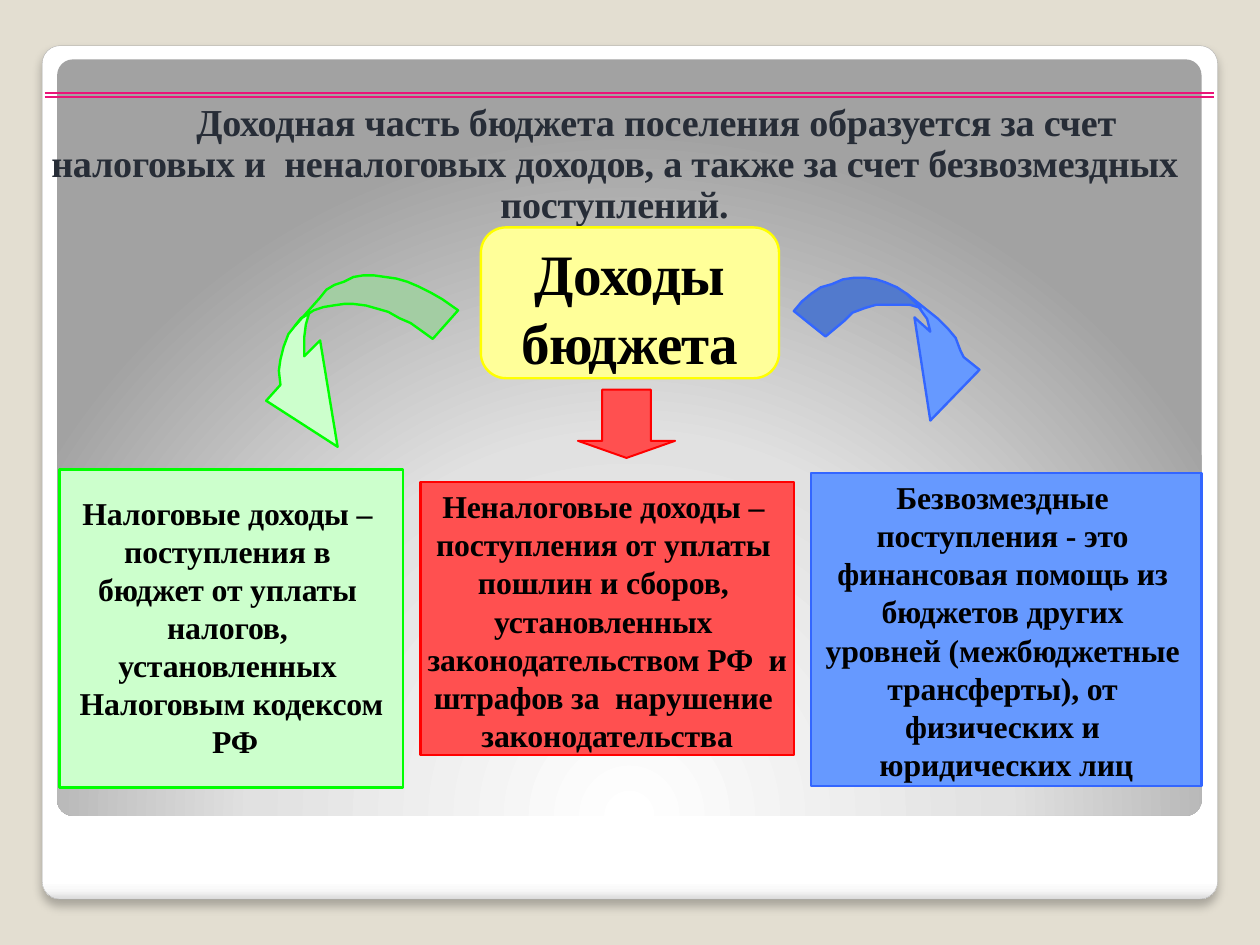
from pptx import Presentation
from pptx.dml.color import RGBColor
from pptx.enum.shapes import MSO_CONNECTOR, MSO_SHAPE
from pptx.enum.text import MSO_ANCHOR, MSO_AUTO_SIZE, PP_ALIGN
from pptx.oxml import parse_xml
from pptx.oxml.ns import nsdecls
from pptx.util import Pt

COLORS = {
    "background": "E3DED1", "frame edge": "A4A4A4", "shadow": "000000",
    "rule": "EA1579", "title": "272D37", "text": "000000",
    "yellow": "FFFF99", "yellow edge": "FFFF00",
    "green": "CCFFCC", "green edge": "00FF00", "green fold": "A3CDA3",
    "red": "FF5050", "red edge": "FF0000",
    "blue": "6699FF", "blue edge": "3366FF", "blue fold": "527ACD",
}
FRAME_STOPS = [(0, "FFFFFF"), (98, "FFFFFF"), (99, "F7F7F7"), (100, "DADADA")]
PANEL_STOPS = [(0, "FFFFFF"), (55, "E1E1E1"), (100, "A2A2A2")]
DOWNWARD = '<a:lin ang="5400000" scaled="0"/>'
FROM_BOTTOM = ('<a:path path="circle"><a:fillToRect l="50000" t="175000" '
               'r="50000" b="-75000"/></a:path>')

TITLE = ("Доходная часть бюджета поселения образуется за счет налоговых и  "
         "неналоговых доходов, а также за счет безвозмездных поступлений.")
# Box, colour, top inset, side inset, text
INCOME_KINDS = [
    ((37.4, 295.9, 216.7, 200.2), "green", 15, 10.8,
     "Налоговые доходы –  поступления в  бюджет от уплаты  налогов,  "
     "установленных  Налоговым кодексом  РФ"),
    ((265, 303.8, 235.4, 172.1), "red", 3, 2,
     "Неналоговые доходы –  поступления от уплаты  пошлин и сборов,  "
     "установленных  законодательством РФ  и штрафов за  нарушение  "
     "законодательства"),
    ((511.2, 298.1, 246.2, 197.3), "blue", 3, 8.6,
     "Безвозмездные  поступления - это  финансовая помощь из  бюджетов "
     "других  уровней (межбюджетные  трансферты), от  физических и  "
     "юридических лиц"),
]
# Corner of each curved arrow, colour, outline of the fold, outline of the head
CURVED_ARROWS = [
    ((500.4, 175), "blue",
     [(0, 21), (5, 15), (11, 10), (17, 6), (24, 4), (31, 1), (38, 0), (45, 0),
      (52, 1), (58, 3), (65, 6), (71, 10), (77, 16), (80, 19), (73, 17),
      (66, 17), (58, 17), (52, 17), (45, 19), (37, 22), (32, 27), (26, 32),
      (20, 37)],
     [(71, 10), (91, 26), (97, 32), (102, 38), (105, 46), (107, 50), (117, 58),
      (86, 90), (76, 25), (86, 34), (84, 26), (79, 19), (74, 13)]),
    ((167.8, 173.5), "green",
     [(18, 32), (34, 14), (38, 9), (43, 6), (49, 4), (55, 1), (61, 0), (68, 0),
      (75, 1), (82, 2), (89, 4), (96, 7), (104, 11), (111, 15), (121, 22),
      (105, 40), (98, 35), (91, 30), (84, 27), (77, 23), (70, 21), (63, 19),
      (55, 18), (49, 18), (42, 19), (36, 20), (30, 22), (27, 24), (22, 27)],
     [(27, 24), (25, 31), (24, 39), (24, 51), (34, 41), (45, 108), (0, 79),
      (9, 69), (8, 60), (9, 53), (11, 45), (14, 37), (18, 32), (22, 27)]),
]


def rgb(name):
    return RGBColor.from_string(COLORS[name])


def paint(shape, fill, edge, width=1.5):
    shape.shadow.inherit = False
    shape.fill.solid()
    shape.fill.fore_color.rgb = rgb(fill)
    shape.line.color.rgb = rgb(edge)
    shape.line.width = Pt(width)


def add_preset(page, kind, box):
    return page.shapes.add_shape(kind, *[Pt(length) for length in box])


def write(frame, *lines, size=20, color="text", spacing=-0.1, leading=None,
          indent=0, anchor=MSO_ANCHOR.TOP, top=0, side=0):
    """Fill a text frame with centred bold lines, one paragraph each."""
    frame.word_wrap = True
    frame.auto_size = MSO_AUTO_SIZE.NONE
    frame.vertical_anchor = anchor
    frame.margin_top, frame.margin_bottom = Pt(top), Pt(0)
    frame.margin_left = frame.margin_right = Pt(side)
    for number, line in enumerate(lines):
        para = frame.add_paragraph() if number else frame.paragraphs[0]
        para.alignment = PP_ALIGN.CENTER
        if leading:
            para.line_spacing = Pt(leading)
        if indent:
            para._p.get_or_add_pPr().set("indent", str(Pt(indent)))
        span = para.add_run()
        span.text = line
        span.font.name = "Times New Roman"
        span.font.size = Pt(size)
        span.font.bold = True
        span.font.color.rgb = rgb(color)
        span.font._element.set("spc", str(round(spacing * 100)))


def add_gradient_panel(page, box, stops, direction):
    panel = add_preset(page, MSO_SHAPE.ROUNDED_RECTANGLE, box)
    panel.adjustments[0] = 0.021
    panel.shadow.inherit = False
    panel.line.fill.background()
    panel.fill.solid()
    marks = "".join(f'<a:gs pos="{place * 1000}"><a:srgbClr val="{color}"/></a:gs>'
                    for place, color in stops)
    solid = panel.element.spPr.find(
        "{http://schemas.openxmlformats.org/drawingml/2006/main}solidFill")
    panel.element.spPr.replace(solid, parse_xml(
        f'<a:gradFill {nsdecls("a")} rotWithShape="1"><a:gsLst>{marks}</a:gsLst>'
        f'{direction}</a:gradFill>'))
    return panel


def add_backdrop(page):
    page.background.fill.solid()
    page.background.fill.fore_color.rgb = rgb("background")
    frame = add_gradient_panel(page, (26.6, 28.8, 740.9, 537.8), FRAME_STOPS, DOWNWARD)
    frame.line.color.rgb = rgb("frame edge")
    frame.line.width = Pt(0.16)
    frame.element.spPr.effectLst.append(parse_xml(
        f'<a:outerShdw {nsdecls("a")} blurRad="{Pt(6)}" dist="{Pt(4)}" dir="5400000" '
        f'algn="t" rotWithShape="0"><a:srgbClr val="{COLORS["shadow"]}">'
        f'<a:alpha val="25000"/></a:srgbClr></a:outerShdw>'))
    return add_gradient_panel(page, (36, 37.4, 721.4, 476.6), PANEL_STOPS, FROM_BOTTOM)


def add_heading(page, box, backdrop):
    title = page.shapes.title
    title.left, title.top, title.width, title.height = [Pt(length) for length in box]
    write(title.text_frame, TITLE, size=24, color="title", spacing=-0.13,
          leading=25.9, indent=52.6, anchor=MSO_ANCHOR.BOTTOM)
    backdrop.element.addnext(title.element)


def add_double_rule(page, left, top, width, gap):
    for y in (top, top + gap):
        rule = page.shapes.add_connector(
            MSO_CONNECTOR.STRAIGHT, Pt(left), Pt(y), Pt(left + width), Pt(y))
        rule.line.color.rgb = rgb("rule")
        rule.line.width = Pt(1.25)
        rule.element.spPr.append(parse_xml(f'<a:effectLst {nsdecls("a")}/>'))


def add_total(page, box):
    total = add_preset(page, MSO_SHAPE.ROUNDED_RECTANGLE, box)
    paint(total, "yellow", "yellow edge")
    write(total.text_frame, "Доходы", "бюджета", size=36, spacing=-0.4, top=2.5)


def add_income_kind(page, box, color, top, side, text):
    card = add_preset(page, MSO_SHAPE.RECTANGLE, box)
    paint(card, color, f"{color} edge")
    write(card.text_frame, text, top=top, side=side)


def add_curved_arrow(page, corner, color, fold, head):
    left, top = corner
    for points, fill in ((head, color), (fold, f"{color} fold")):
        builder = page.shapes.build_freeform(*points[0], scale=Pt(1))
        builder.add_line_segments(points[1:], close=True)
        paint(builder.convert_to_shape(Pt(left), Pt(top)), fill, f"{color} edge")


def add_down_arrow(page, box):
    arrow = add_preset(page, MSO_SHAPE.DOWN_ARROW, box)
    arrow.adjustments[0], arrow.adjustments[1] = 0.5, 0.25
    paint(arrow, "red", "red edge", 1.25)


def main():
    deck = Presentation()
    deck.slide_width, deck.slide_height = Pt(794.2), Pt(595.4)
    page = deck.slides.add_slide(deck.slide_layouts[5])
    backdrop = add_backdrop(page)
    add_heading(page, (25.2, 64.1, 724.3, 78.5), backdrop)
    add_double_rule(page, 28.1, 58.8, 737.3, 2.5)
    add_total(page, (303.1, 143.3, 187.9, 95))
    for kind in INCOME_KINDS:
        add_income_kind(page, *kind)
    for arrow in CURVED_ARROWS:
        add_curved_arrow(page, *arrow)
    add_down_arrow(page, (364.3, 245.5, 61.2, 43))
    deck.save("out.pptx")


if __name__ == "__main__":
    main()
